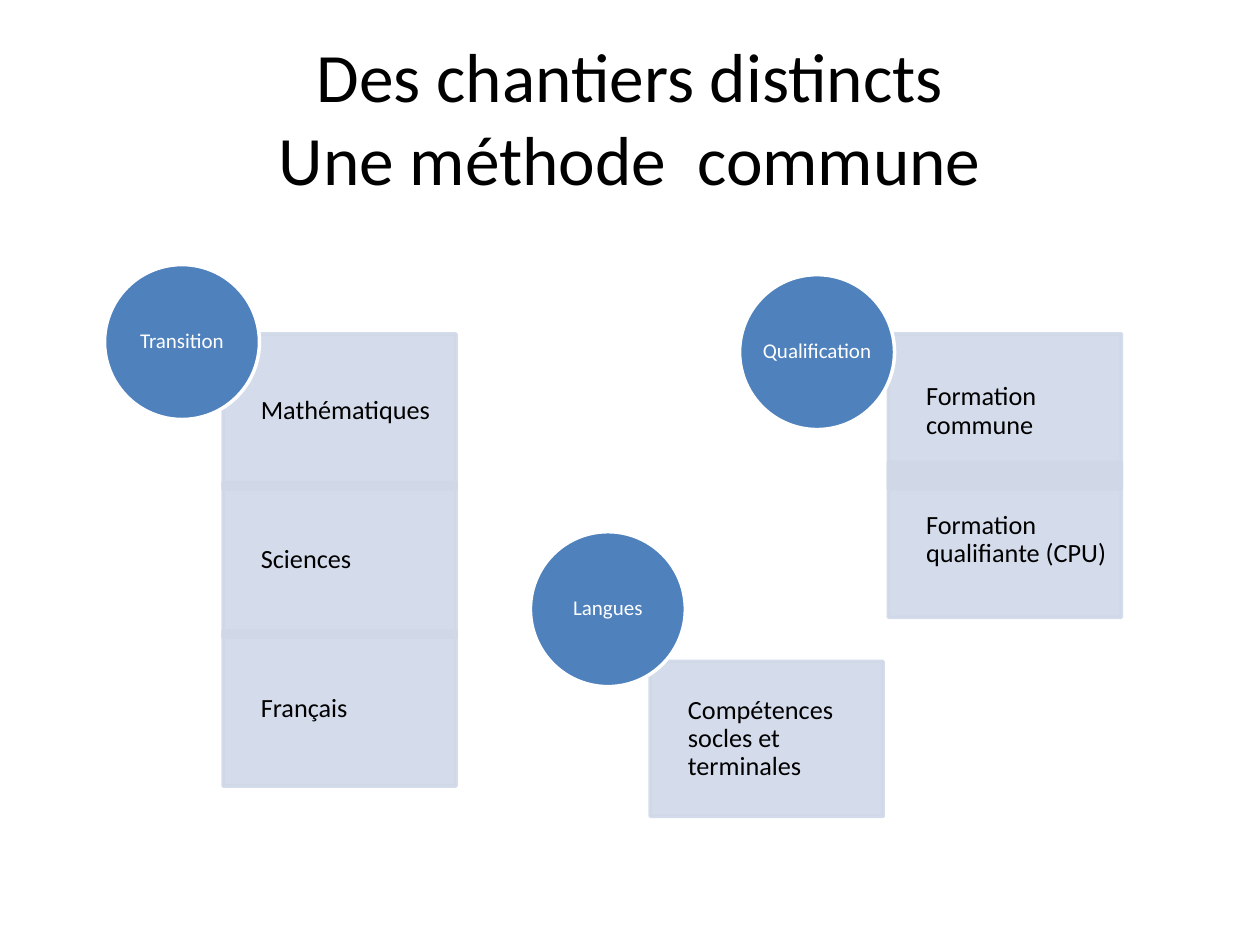
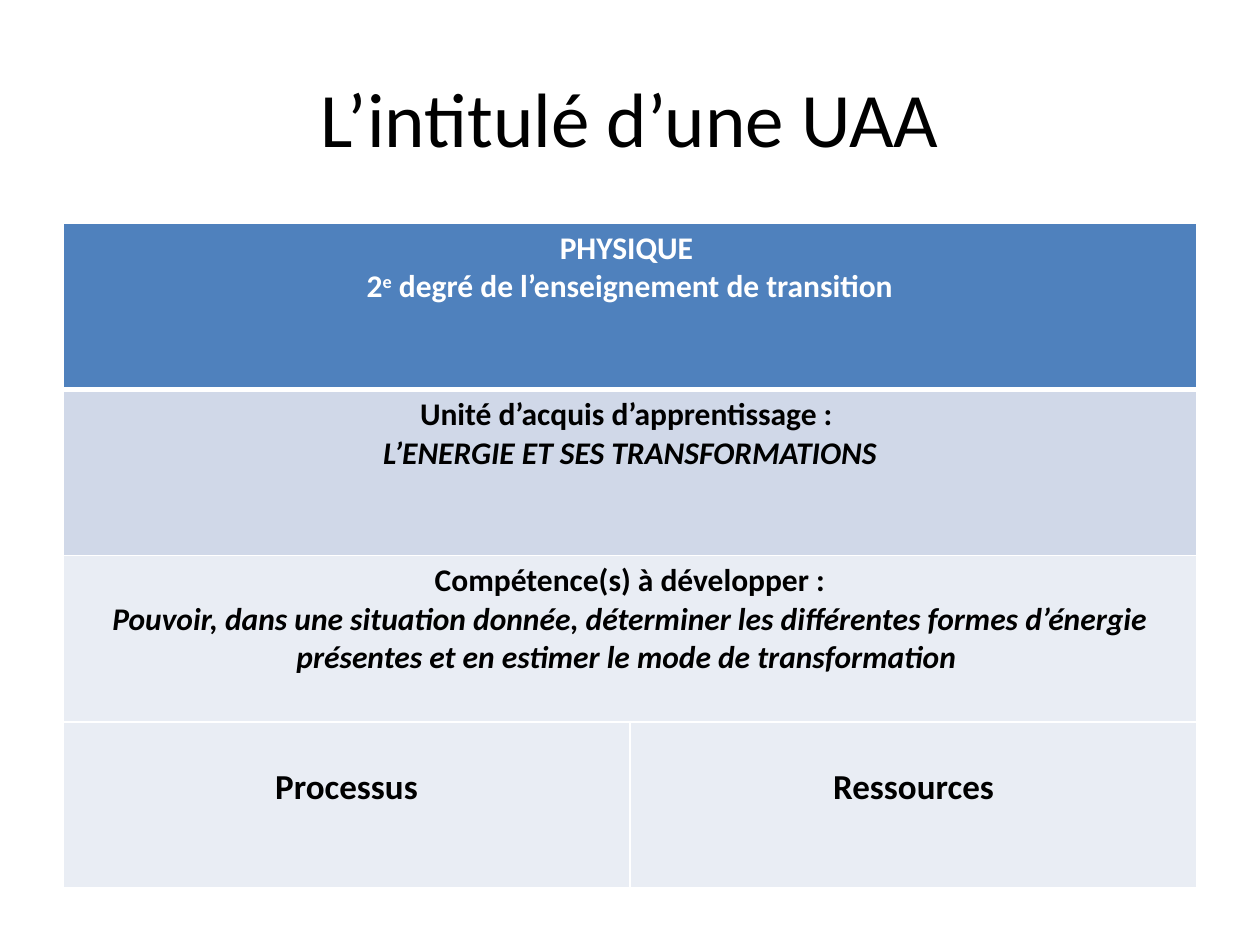
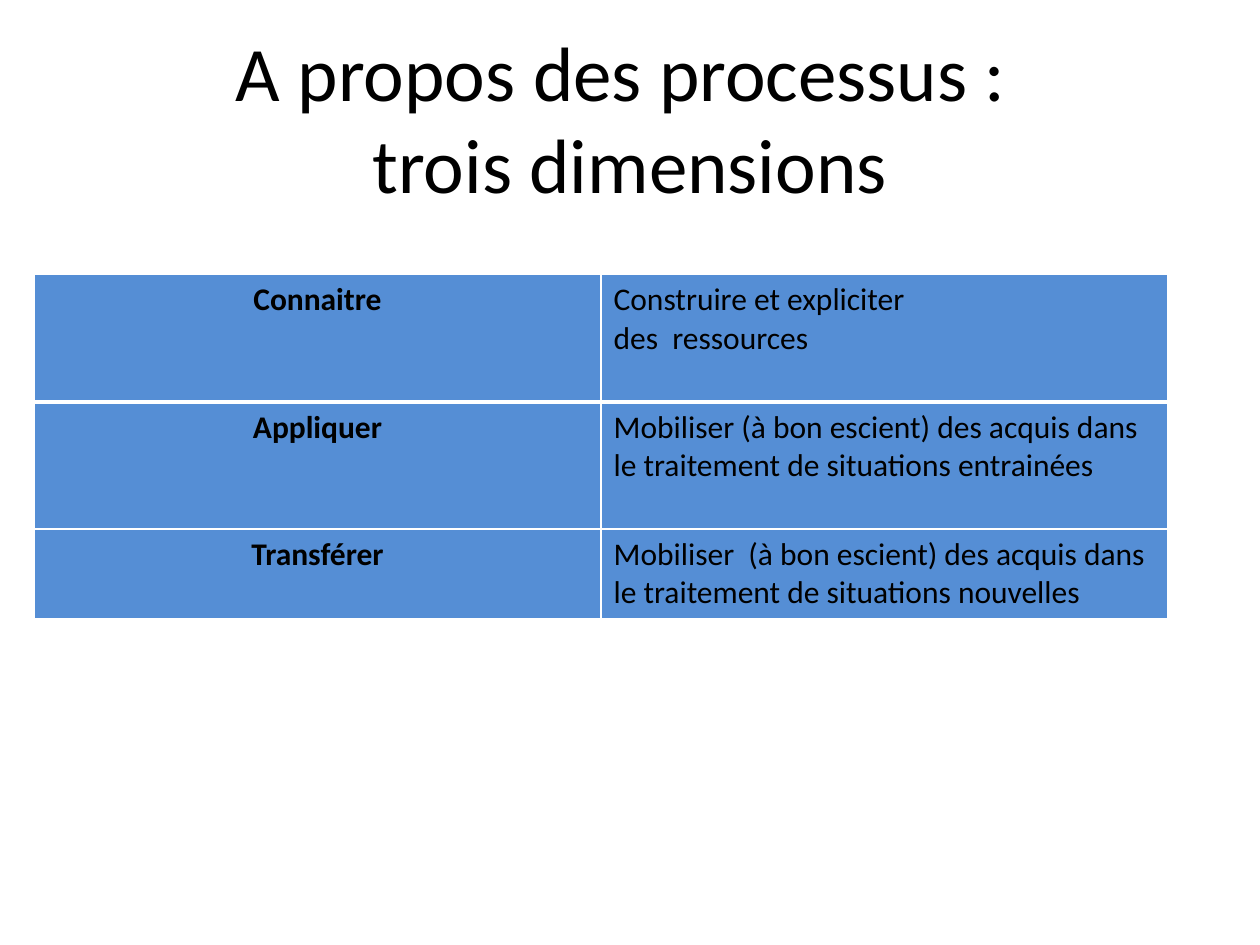
"""Build three slides on learning units: stacked themes and two tables."""
from dataclasses import dataclass

from lxml import etree
from pptx import Presentation
from pptx.dml.color import RGBColor
from pptx.enum.shapes import MSO_SHAPE
from pptx.enum.text import MSO_ANCHOR, MSO_AUTO_SIZE, PP_ALIGN
from pptx.oxml.ns import qn
from pptx.util import Inches, Pt

RECT, OVAL = MSO_SHAPE.RECTANGLE, MSO_SHAPE.OVAL
MIDDLE, NO_FIT = MSO_ANCHOR.MIDDLE, MSO_AUTO_SIZE.NONE
LEFT, CENTER = PP_ALIGN.LEFT, PP_ALIGN.CENTER
TITLE_ONLY = 5


@dataclass(frozen=True)
class Theme:
    font: str = "Calibri"
    black: str = "000000"
    white: str = "FFFFFF"
    blue: str = "4F81BD"
    bright: str = "558ED5"
    pale: str = "D0D8E8"
    paler: str = "E9EDF4"
    title: float = 44
    long_title: float = 39.6
    head: float = 20
    cell: float = 18
    box: float = 15
    disc: float = 12
    outline: float = 2
    rule: float = 1
    head_rule: float = 3
    box_alpha: int = 90


@dataclass(frozen=True)
class Stack:
    name: str
    disc: tuple[float, float]
    first: tuple[float, float]
    pitch: float
    boxes: tuple[str, ...]


@dataclass(frozen=True)
class Line:
    """Paragraph whose odd-numbered runs are superscript."""
    texts: tuple[str, ...]
    bold: bool = True
    italic: bool = False
    align: PP_ALIGN = CENTER
    size: float = Theme.cell


@dataclass(frozen=True)
class Cell:
    lines: tuple[Line, ...]
    fill: str
    color: str = Theme.black
    top: float = 0.05


T = Theme()
DISC = 1.23
BOX_W, BOX_H = 1.85, 1.23
COL_W = 4.5

STACKS = (
    Stack("Transition", (0.83, 2.1), (1.77, 2.65), 1.18,
          ("Mathématiques", "Sciences", "Français")),
    Stack("Langues", (4.21, 4.22), (5.16, 5.25), 0,
          ("Compétences socles et terminales",)),
    Stack("Qualification", (5.87, 2.18), (7.05, 2.65), 1.02,
          ("Formation commune", "Formation qualifiante (CPU)")),
)


def heading_cell(text: str) -> Cell:
    """Describe a column heading set lower in its cell."""
    return Cell((Line((text,), size=T.head),), T.paler, top=0.35)


UNIT_ROWS = (
    (Cell((Line(("PHYSIQUE ",)),
           Line(("2", "e", " degré de l’enseignement de transition"))),
          T.blue, T.white),),
    (Cell((Line(("Unité d’acquis d’apprentissage : ",)),
           Line(("L’ENERGIE ET SES TRANSFORMATIONS",), italic=True)), T.pale),),
    (Cell((Line(("Compétence(s) à développer :",)),
           Line(("Pouvoir, dans une situation donnée, déterminer les différentes "
                 "formes d’énergie présentes et en estimer le mode de "
                 "transformation ",), italic=True)), T.paler),),
    (heading_cell("Processus"), heading_cell("Ressources")),
)

DIMENSIONS = (
    ("Connaitre", ("Construire et expliciter", "des  ressources")),
    ("Appliquer", ("Mobiliser (à bon escient) des acquis dans le traitement "
                   "de situations entrainées",)),
    ("Transférer", ("Mobiliser  (à bon escient) des acquis dans le traitement "
                    "de situations nouvelles",)),
)


def rgb(color: str) -> RGBColor:
    """Convert a hex colour."""
    return RGBColor.from_string(color)


def style(p, size: float, color: str, align: PP_ALIGN, bold=False, italic=False) -> None:
    """Format a paragraph."""
    p.alignment = align
    f = p.font
    f.name, f.size, f.bold, f.italic = T.font, Pt(size), bold, italic
    f.color.rgb = rgb(color)


def new_slide(prs, title: str, size: float = T.title):
    """Add a slide with a formatted title."""
    slide = prs.slides.add_slide(prs.slide_layouts[TITLE_ONLY])
    sp = slide.shapes.title
    sp.left, sp.top = Inches(0.5), Inches(0.3)
    sp.width, sp.height = Inches(9), Inches(1.25)
    tf = sp.text_frame
    tf.text = title
    tf.auto_size, tf.vertical_anchor = NO_FIT, MIDDLE
    style(tf.paragraphs[0], size, T.black, CENTER)
    return slide


def add_block(slide, kind, at, size, text: str, fill: str, line: str):
    """Add a filled, outlined shape and return it with its paragraph."""
    sp = slide.shapes.add_shape(kind, *map(Inches, (*at, *size)))
    sp.shadow.inherit = False
    sp.fill.solid()
    sp.fill.fore_color.rgb = rgb(fill)
    sp.line.color.rgb = rgb(line)
    sp.line.width = Pt(T.outline)
    tf = sp.text_frame
    tf.text = text
    tf.word_wrap, tf.vertical_anchor = True, MIDDLE
    p = tf.paragraphs[0]
    p.line_spacing = 0.9
    return sp, p


def set_margins(tf, left: float, other: float) -> None:
    """Set the insets of a text frame."""
    tf.margin_left = Inches(left)
    tf.margin_top = tf.margin_right = tf.margin_bottom = Inches(other)


def add_stack(slide, stack: Stack) -> None:
    """Draw a column of boxes with a named disc over its corner."""
    left, top = stack.first
    for i, text in enumerate(stack.boxes):
        sp, p = add_block(slide, RECT, (left, top + i * stack.pitch),
                          (BOX_W, BOX_H), text, T.pale, T.pale)
        set_margins(sp.text_frame, 0.3, 0.12)
        style(p, T.box, T.black, LEFT)
        for clr in sp.element.spPr.iter(qn("a:srgbClr")):
            etree.SubElement(clr, qn("a:alpha"), val=str(T.box_alpha * 1000))
    sp, p = add_block(slide, OVAL, stack.disc, (DISC, DISC), stack.name,
                      T.blue, T.white)
    set_margins(sp.text_frame, 0, 0)
    style(p, T.disc, T.white, CENTER)


def set_borders(cell, top: float, bottom: float) -> None:
    """Give a cell white borders."""
    tc_pr = cell._tc.get_or_add_tcPr()
    widths = {"lnL": T.rule, "lnR": T.rule, "lnT": top, "lnB": bottom}
    for i, (tag, width) in enumerate(widths.items()):
        ln = etree.Element(qn(f"a:{tag}"), w=str(Pt(width)))
        fill = etree.SubElement(ln, qn("a:solidFill"))
        etree.SubElement(fill, qn("a:srgbClr"), val=T.white)
        tc_pr.insert(i, ln)


def fill_cell(cell, data: Cell) -> None:
    """Write the paragraphs of a cell."""
    cell.margin_top = Inches(data.top)
    tf = cell.text_frame
    for i, line in enumerate(data.lines):
        p = tf.add_paragraph() if i else tf.paragraphs[0]
        style(p, line.size, data.color, line.align, line.bold, line.italic)
        for j, text in enumerate(line.texts):
            r = p.add_run()
            r.text = text
            if j % 2:
                r._r.get_or_add_rPr().set("baseline", "30000")


def add_grid(slide, at: tuple[float, float], heights: tuple[float, ...], rows) -> None:
    """Draw a two-column table; a row with one cell spans both columns."""
    size = (2 * COL_W, sum(heights))
    table = slide.shapes.add_table(len(rows), 2, *map(Inches, (*at, *size))).table
    table.first_row = table.horz_banding = False
    for i, (height, row) in enumerate(zip(heights, rows)):
        table.rows[i].height = Inches(height)
        for j in range(2):
            cell = table.cell(i, j)
            cell.fill.solid()
            cell.fill.fore_color.rgb = rgb(row[min(j, len(row) - 1)].fill)
            set_borders(cell, T.head_rule if i == 1 else T.rule,
                        T.head_rule if i == 0 else T.rule)
        if len(row) == 1:
            table.cell(i, 0).merge(table.cell(i, 1))
        for j, data in enumerate(row):
            fill_cell(table.cell(i, j), data)


def main() -> None:
    """Build and save the presentation."""
    prs = Presentation()
    prs.slide_width, prs.slide_height = Inches(10), Inches(7.5)

    slide = new_slide(prs, "Des chantiers distincts\vUne méthode  commune", T.long_title)
    for stack in STACKS:
        add_stack(slide, stack)

    slide = new_slide(prs, "L’intitulé d’une UAA")
    add_grid(slide, (0.5, 1.77), (1.32,) * len(UNIT_ROWS), UNIT_ROWS)

    slide = new_slide(prs, "A propos des processus : \vtrois dimensions")
    rows = [(Cell((Line((name,)),), T.bright),
             Cell(tuple(Line((text,), bold=False, align=LEFT) for text in texts),
                  T.bright))
            for name, texts in DIMENSIONS]
    add_grid(slide, (0.27, 2.18), (1.01, 1.01, 0.7), rows)

    prs.save("out.pptx")


if __name__ == "__main__":
    main()
